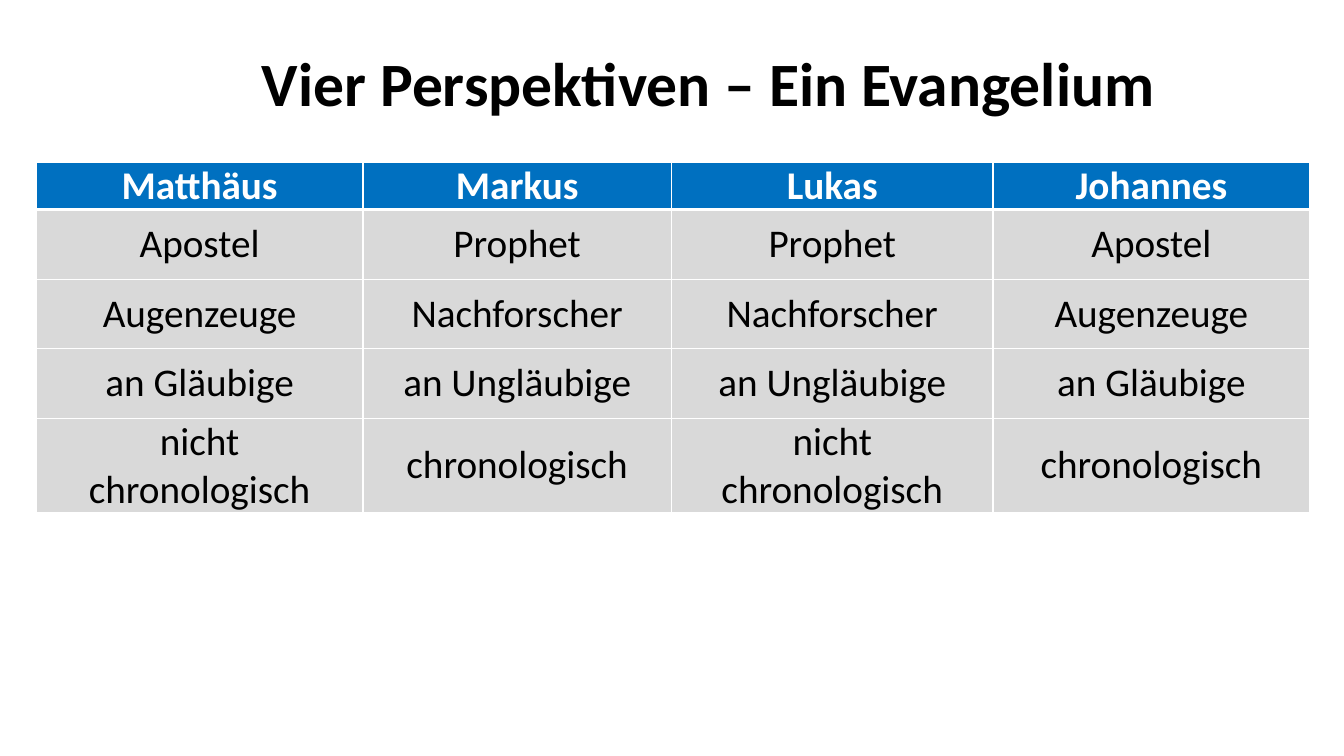
from lxml import etree
from pptx import Presentation
from pptx.dml.color import RGBColor
from pptx.enum.text import MSO_ANCHOR, PP_ALIGN
from pptx.oxml.ns import qn
from pptx.util import Emu, Pt

CENTER, MIDDLE = PP_ALIGN.CENTER, MSO_ANCHOR.MIDDLE
BLACK = RGBColor(0x00, 0x00, 0x00)
WHITE = RGBColor(0xFF, 0xFF, 0xFF)
BLUE = RGBColor(0x00, 0x70, 0xC0)
GREY = RGBColor(0xD9, 0xD9, 0xD9)
EMU_PER_PX = 9144  # 100 px to the inch


def px(n):
    return Emu(n * EMU_PER_PX)


class SlideBuilder:
    font = "Calibri"

    def __init__(self, slide):
        self.s = slide

    def add_text(self, tf, text, size, color, bold=False, spacing=None):
        p = tf.paragraphs[0]
        p.alignment, p.line_spacing = CENTER, spacing
        r = p.add_run()
        r.text = text
        r.font.color.rgb = color
        for name, value in {"name": self.font, "size": Pt(size), "bold": bold}.items():
            setattr(r.font, name, value)

    def title(self, box, text):
        tf = self.s.shapes.add_textbox(*map(px, box)).text_frame
        tf.word_wrap, tf.vertical_anchor = True, MIDDLE
        self.add_text(tf, text, 44, BLACK, bold=True, spacing=0.9)

    def borders(self, cell, widths):
        tc_pr = cell._tc.get_or_add_tcPr()
        for side, width in zip("LRTB", widths):
            ln = etree.SubElement(tc_pr, qn(f"a:ln{side}"), w=str(Pt(width)))
            fill = etree.SubElement(ln, qn("a:solidFill"))
            etree.SubElement(fill, qn("a:srgbClr"), val=str(WHITE))

    def cell(self, cell, text, row):
        header = row == 0
        margins = {"margin_left": px(14), "margin_right": px(14),
                   "margin_top": 0, "margin_bottom": 0}
        for name, value in {**margins, "vertical_anchor": MIDDLE}.items():
            setattr(cell, name, value)
        # The rule under the header is thicker than the rest
        self.borders(cell, (1, 1, 3 if row == 1 else 1, 3 if header else 1))
        cell.fill.solid()
        cell.fill.fore_color.rgb = BLUE if header else GREY
        self.add_text(cell.text_frame, text, 28, WHITE if header else BLACK, bold=header)

    def table(self, left, top, widths, heights, rows):
        box = map(px, (left, top, sum(widths), sum(heights)))
        table = self.s.shapes.add_table(len(rows), len(widths), *box).table
        for column, width in zip(table.columns, widths):
            column.width = px(width)
        for i, (height, texts) in enumerate(zip(heights, rows)):
            table.rows[i].height = px(height)
            for j, text in enumerate(texts):
                self.cell(table.cell(i, j), text, i)


def main():
    prs = Presentation()
    prs.slide_width, prs.slide_height = px(1333), px(750)
    slide = SlideBuilder(prs.slides.add_slide(prs.slide_layouts[6]))

    # Heading
    slide.title((128, 41, 1150, 89), "Vier Perspektiven – Ein Evangelium")

    # Comparison of the four Gospels
    gospels = [
        ("Matthäus", "Markus", "Lukas", "Johannes"),
        ("Apostel", "Prophet", "Prophet", "Apostel"),
        ("Augenzeuge", "Nachforscher", "Nachforscher", "Augenzeuge"),
        ("an Gläubige", "an Ungläubige", "an Ungläubige", "an Gläubige"),
        ("nicht chronologisch", "chronologisch", "nicht chronologisch", "chronologisch"),
    ]
    slide.table(36, 161, (324, 306, 319, 314), [47] + [69] * 4, gospels)

    prs.save("out.pptx")


if __name__ == "__main__":
    main()
